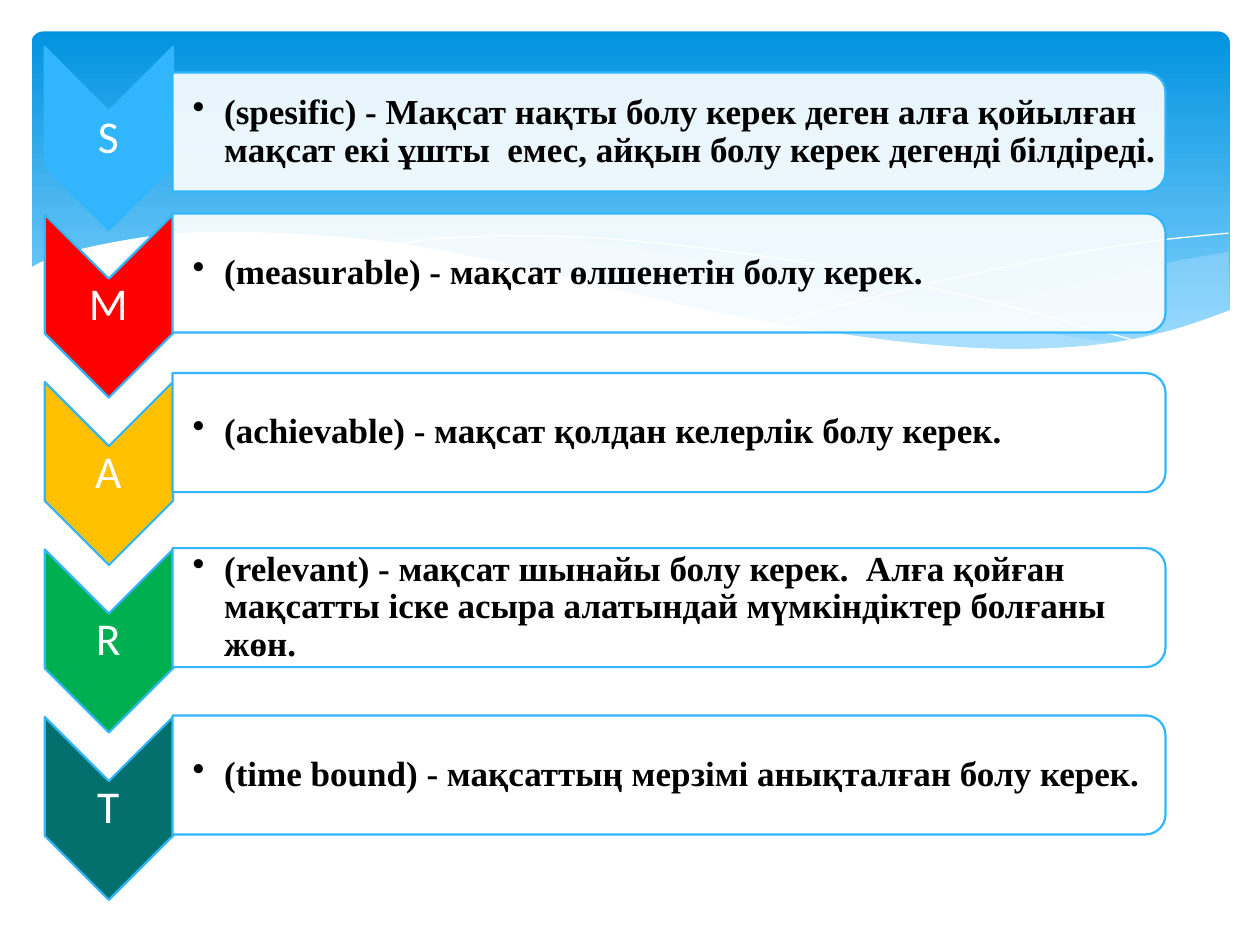
from lxml import etree
from pptx import Presentation
from pptx.dml.color import RGBColor
from pptx.enum.shapes import MSO_SHAPE
from pptx.enum.text import MSO_ANCHOR, PP_ALIGN
from pptx.oxml.ns import qn
from pptx.util import Pt

CHEVRON = MSO_SHAPE.CHEVRON
PANEL = MSO_SHAPE.ROUND_2_SAME_RECTANGLE
ROUNDED = MSO_SHAPE.ROUNDED_RECTANGLE
MIDDLE = MSO_ANCHOR.MIDDLE
CENTER = PP_ALIGN.CENTER
LEFT = PP_ALIGN.LEFT

WHITE = RGBColor(0xFF, 0xFF, 0xFF)
BLACK = RGBColor(0x00, 0x00, 0x00)
SKY = RGBColor(0x31, 0xB6, 0xFD)
RED = RGBColor(0xFF, 0x00, 0x00)
AMBER = RGBColor(0xFF, 0xC0, 0x00)
GREEN = RGBColor(0x00, 0xB0, 0x50)
TEAL = RGBColor(0x03, 0x70, 0x6E)
PALE_BLUE = RGBColor(0xC6, 0xE7, 0xFC)
BANNER_TOP = RGBColor(0x02, 0x93, 0xE0)
BANNER_BOTTOM = RGBColor(0x83, 0xD3, 0xFE)

# Letter, chevron colour, vertical centre of the panel, text
GOALS = [
    ("S", SKY, 75.4, "(spesific) - Мақсат нақты болу керек деген алға қойылған "
     "мақсат екі ұшты  емес, айқын болу керек дегенді білдіреді."),
    ("M", RED, 156, "(measurable) - мақсат өлшенетін болу керек."),
    ("A", AMBER, 247.2, "(achievable) - мақсат қолдан келерлік болу керек."),
    ("R", GREEN, 347.2, "(relevant) - мақсат шынайы болу керек.  Алға қойған "
     "мақсатты іске асыра алатындай мүмкіндіктер болғаны жөн."),
    ("T", TEAL, 442.8, "(time bound) - мақсаттың мерзімі анықталған болу керек."),
]
FIRST_CHEVRON_Y = 79.2
CHEVRON_PITCH = 95.7

# Knots of the wave curves, in points
RIGHT_BAND_TOP = [(702, 144), (663, 151), (620, 160.6), (561, 174.2), (508, 185), (476, 190.8)]
RIGHT_BAND_BOTTOM = [(476, 190.8), (518, 195.8), (554, 199.2), (586, 200.2), (621, 198),
                     (652, 193.6), (678, 186.5), (702.7, 177.8)]
LONG_BAND_TOP = [(643, 196.6), (602.6, 190.8), (533.5, 177.8), (453, 159.8), (389.5, 146.2),
                 (335, 137.5), (273.6, 133.2), (236, 134.6), (206, 137.5)]
LONG_BAND_BOTTOM = [(206, 137.5), (260.6, 146.2), (323, 159.8), (407.5, 178.6), (468, 190.1),
                    (520, 197.2), (565, 200.2), (610.6, 199.4), (643, 196.6)]
FALLING_LINE = [(222.5, 140.4), (254, 136.1), (299.5, 134.6), (352, 136.8), (419, 144),
                (479, 153.4), (547, 167.8), (598, 180.7), (653, 195.8)]
RISING_LINE = [(441.4, 185), (484, 173.5), (538.6, 160.6), (602, 146.9), (655, 138.2),
               (702, 133.2)]
WHITE_WAVE = [(703.4, 177.1), (669.6, 188.6), (630, 196.6), (582.5, 199.4), (535.7, 197.3),
              (481, 190.8), (417, 180), (362, 167.8), (301, 153.4), (245, 141.8), (195, 135.4),
              (139, 132.5), (95, 133.9), (54.7, 140.4), (28.8, 147.6), (16.6, 153.4)]
WAVE_BASE = [(16.6, 237), (703.4, 237)]


def smooth(knots, steps=5):
    """Return points on a Catmull-Rom curve through the knots."""
    padded = [knots[0], *knots, knots[-1]]
    points = [knots[0]]
    for a, b, c, d in zip(padded, padded[1:], padded[2:], padded[3:]):
        for step in range(1, steps + 1):
            t = step / steps
            points.append(tuple(
                q + t * (r - p) / 2 + t**2 * (2 * p - 5 * q + 4 * r - s) / 2
                + t**3 * (3 * q - p - 3 * r + s) / 2
                for p, q, r, s in zip(a, b, c, d)))
    return points


def set_fill(shape, color, opacity=100):
    shape.fill.solid()
    shape.fill.fore_color.rgb = color
    if opacity < 100:
        color_element = shape.fill._xPr.find(qn("a:solidFill"))[0]
        etree.SubElement(color_element, qn("a:alpha"), val=str(opacity * 1000))


def add_outline(slide, points, closed):
    vertices = [(Pt(x), Pt(y)) for x, y in points]
    builder = slide.shapes.build_freeform(*vertices[0])
    builder.add_line_segments(vertices[1:], close=closed)
    shape = builder.convert_to_shape()
    shape.shadow.inherit = False
    return shape


def add_area(slide, points, color, opacity=100):
    shape = add_outline(slide, points, True)
    set_fill(shape, color, opacity)
    shape.line.fill.background()


def add_curve(slide, knots):
    shape = add_outline(slide, smooth(knots), False)
    shape.fill.background()
    shape.line.color.rgb = WHITE
    shape.line.width = Pt(0)


def add_banner(slide):
    banner = slide.shapes.add_shape(ROUNDED, Pt(18), Pt(18), Pt(684.7), Pt(194.4))
    banner.adjustments[0] = 0.034
    banner.shadow.inherit = False
    banner.line.fill.background()
    banner.fill.gradient()
    banner.fill.gradient_angle = 270
    stops = banner.fill.gradient_stops
    for stop, position, color in zip(stops, (0, 0.9), (BANNER_TOP, BANNER_BOTTOM)):
        stop.position = position
        stop.color.rgb = color


def add_turned_shape(slide, kind, center_x, center_y, width, height, color, opacity=100):
    """Add a shape turned a quarter clockwise; width and height are before turning."""
    shape = slide.shapes.add_shape(kind, Pt(center_x - width / 2), Pt(center_y - height / 2),
                                   Pt(width), Pt(height))
    shape.rotation = 90
    shape.shadow.inherit = False
    set_fill(shape, color, opacity)
    shape.line.color.rgb = SKY
    shape.line.width = Pt(1.25)


def add_text(slide, left, center_y, width, height, text, font, size, color,
             bold=False, alignment=LEFT, inset=1, left_inset=1):
    box = slide.shapes.add_textbox(Pt(left), Pt(center_y - height / 2), Pt(width), Pt(height))
    frame = box.text_frame
    frame.word_wrap = True
    frame.vertical_anchor = MIDDLE
    frame.margin_left = Pt(left_inset)
    frame.margin_right = frame.margin_top = frame.margin_bottom = Pt(inset)
    paragraph = frame.paragraphs[0]
    paragraph.alignment = alignment
    paragraph.line_spacing = 0.9
    run = paragraph.add_run()
    run.text = text
    run.font.name = font
    run.font.size = Pt(size)
    run.font.bold = bold
    run.font.color.rgb = color
    return paragraph


def add_bullet(paragraph):
    properties = paragraph._p.get_or_add_pPr()
    properties.set("marL", str(Pt(18)))
    properties.set("indent", str(Pt(-18)))
    etree.SubElement(properties, qn("a:buChar"), char="•")


def add_goal(slide, letter, color, chevron_y, panel_y, text):
    add_turned_shape(slide, CHEVRON, 62.2, chevron_y, 104.6, 73.3, color)
    add_text(slide, 25.2, chevron_y, 73.4, 31.7, letter, "Calibri", 26, WHITE,
             alignment=CENTER, inset=1.4, left_inset=1.4)
    add_turned_shape(slide, PANEL, 382.3, panel_y, 68, 567.4, WHITE, 90)
    paragraph = add_text(slide, 98.6, panel_y, 564, 61.2, text, "Times New Roman", 20, BLACK,
                         bold=True, left_inset=11.5)
    add_bullet(paragraph)


def main():
    presentation = Presentation()
    presentation.slide_width = Pt(720)
    presentation.slide_height = Pt(540)
    slide = presentation.slides.add_slide(presentation.slide_layouts[6])

    add_banner(slide)
    add_area(slide, smooth(RIGHT_BAND_TOP) + smooth(RIGHT_BAND_BOTTOM), PALE_BLUE, 29)
    add_area(slide, smooth(LONG_BAND_TOP) + smooth(LONG_BAND_BOTTOM), PALE_BLUE, 40)
    add_curve(slide, FALLING_LINE)
    add_curve(slide, RISING_LINE)
    add_area(slide, smooth(WHITE_WAVE) + WAVE_BASE, WHITE)

    for row, (letter, color, panel_y, text) in enumerate(GOALS):
        add_goal(slide, letter, color, FIRST_CHEVRON_Y + row * CHEVRON_PITCH, panel_y, text)

    presentation.save("out.pptx")


if __name__ == "__main__":
    main()
